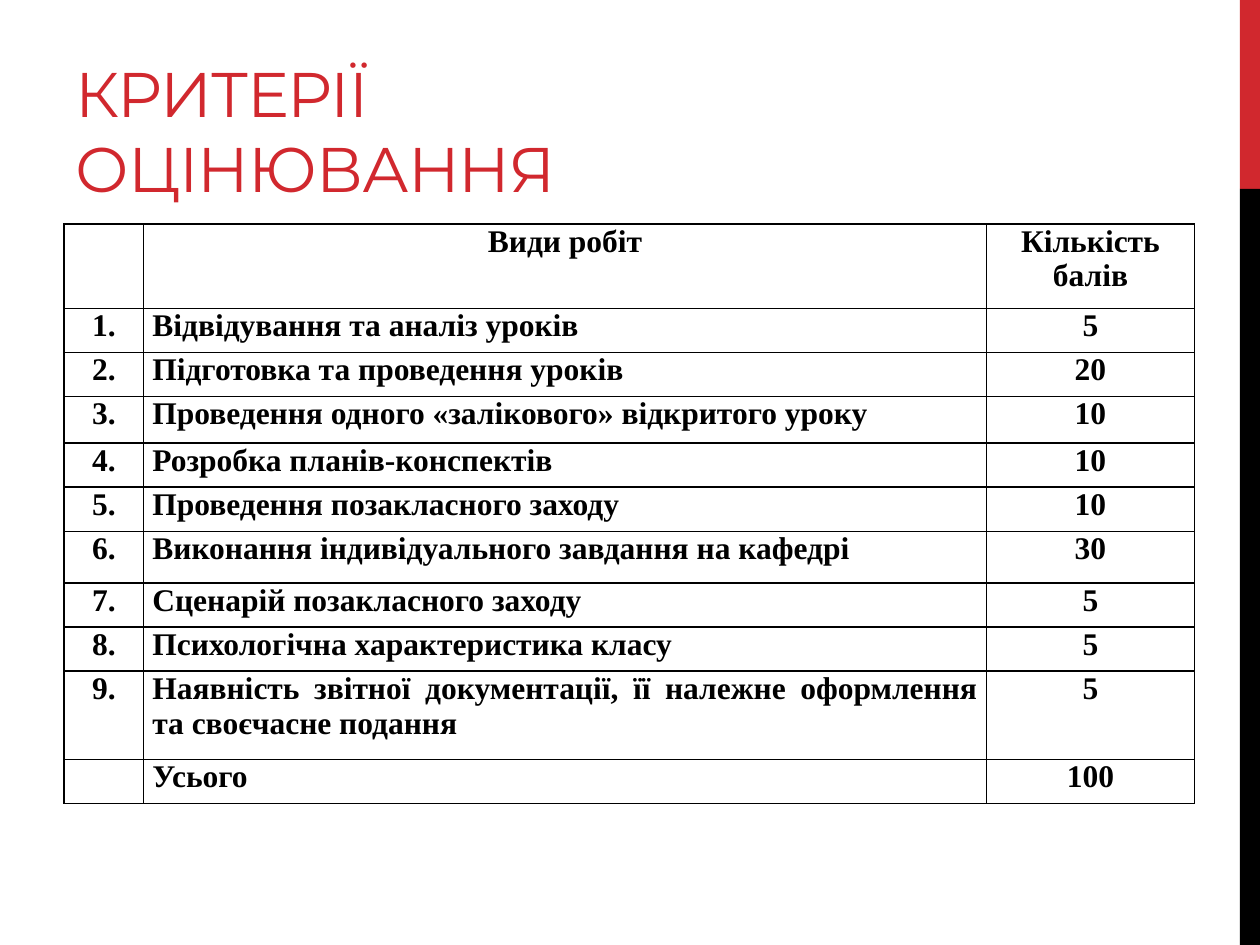
from pptx import Presentation, util as u
from pptx.dml.color import RGBColor
from pptx.enum import shapes, text
from pptx.oxml import parse_xml
from pptx.oxml.ns import nsdecls

RED = RGBColor(0xD1, 0x28, 0x2E)
BLACK = RGBColor(0, 0, 0)
CENTER = text.PP_ALIGN.CENTER
JUSTIFY = text.PP_ALIGN.JUSTIFY

WORKS = [
    ("Відвідування та аналіз уроків", 5),
    ("Підготовка та проведення уроків", 20),
    ("Проведення одного «залікового» відкритого уроку", 10),
    ("Розробка планів-конспектів", 10),
    ("Проведення позакласного заходу", 10),
    ("Виконання індивідуального завдання на кафедрі", 30),
    ("Сценарій позакласного заходу", 5),
    ("Психологічна характеристика класу", 5),
    ("Наявність звітної документації, її належне оформлення та своєчасне подання", 5),
]
COLUMNS = [0.63, 6.69, 1.65]
ROW = 0.35
TALL_ROWS = {0: 0.67, 3: 0.37, 6: 0.41, 9: 0.7}


def write(frame, content, *, font, size, color, bold=False, align=None, spacing=None):
    para = frame.paragraphs[0]
    para.alignment = align
    span = para.add_run()
    span.text = content
    span.font.name = font
    span.font.size = u.Pt(size)
    span.font.bold = bold
    span.font.color.rgb = color
    if spacing is not None:
        span.font._element.set("spc", str(round(spacing * 100)))


class CriteriaSlide:
    heading = dict(font="Montserrat", size=36, color=RED, spacing=-0.6)
    body = dict(font="Times New Roman", size=18, color=BLACK, bold=True)

    def __init__(self, deck):
        self.width, self.height = deck.slide_width, deck.slide_height
        self.page = deck.slides.add_slide(deck.slide_layouts[5])

    def area(self, left, top, width, height):
        return (round(left * self.width), round(top * self.height),
                round(width * self.width), round(height * self.height))

    def band(self, top, height, color):
        box = self.page.shapes.add_shape(
            shapes.MSO_SHAPE.RECTANGLE, *self.area(0.984, top, 0.016, height))
        box.shadow.inherit = False
        box.fill.solid()
        box.fill.fore_color.rgb = color
        box.line.fill.background()

    def title(self, content, left, top, width, height):
        box = self.page.shapes.title
        box.left, box.top, box.width, box.height = self.area(left, top, width, height)
        frame = box.text_frame
        frame.word_wrap = True
        frame.auto_size = text.MSO_AUTO_SIZE.NONE
        frame.vertical_anchor = text.MSO_ANCHOR.BOTTOM
        frame.margin_bottom = u.Inches(0.02)
        write(frame, content, align=text.PP_ALIGN.LEFT, **self.heading)

    def table(self, records, left, top):
        heights = [TALL_ROWS.get(index, ROW) for index in range(len(records))]
        grid = self.page.shapes.add_table(
            len(records), len(COLUMNS), round(left * self.width), round(top * self.height),
            u.Inches(sum(COLUMNS)), u.Inches(sum(heights))).table
        grid.first_row = grid.horz_banding = False
        for column, width in zip(grid.columns, COLUMNS):
            column.width = u.Inches(width)
        for index, (row, height, record) in enumerate(zip(grid.rows, heights, records)):
            row.height = u.Inches(height)
            for number, (cell, content) in enumerate(zip(row.cells, record)):
                align = JUSTIFY if index and number == 1 else CENTER
                self.cell(cell, content, align)

    def cell(self, cell, content, align):
        cell.margin_left = cell.margin_right = u.Inches(0.07)
        cell.margin_top = cell.margin_bottom = 0
        for side in ("lnL", "lnR", "lnT", "lnB"):
            cell._tc.get_or_add_tcPr().append(parse_xml(
                f'<a:{side} {nsdecls("a")} w="{u.Pt(1)}"><a:solidFill>'
                f'<a:srgbClr val="{BLACK}"/></a:solidFill></a:{side}>'))
        cell.fill.background()
        if content:
            write(cell.text_frame, content, align=align, **self.body)


def main():
    deck = Presentation()
    deck.slide_width, deck.slide_height = u.Inches(10), u.Inches(7.5)
    slide = CriteriaSlide(deck)
    slide.band(0, 0.2, RED)
    slide.band(0.2, 0.8, BLACK)
    slide.title("КРИТЕРІЇ ОЦІНЮВАННЯ", 0.05, 0.02, 0.63, 0.2)
    works = [(f"{number}.", work, str(points))
             for number, (work, points) in enumerate(WORKS, 1)]
    total = str(sum(points for _, points in WORKS))
    slide.table([("", "Види робіт", "Кількість балів"), *works, ("", "Усього", total)],
                0.051, 0.237)
    deck.save("out.pptx")


if __name__ == "__main__":
    main()
